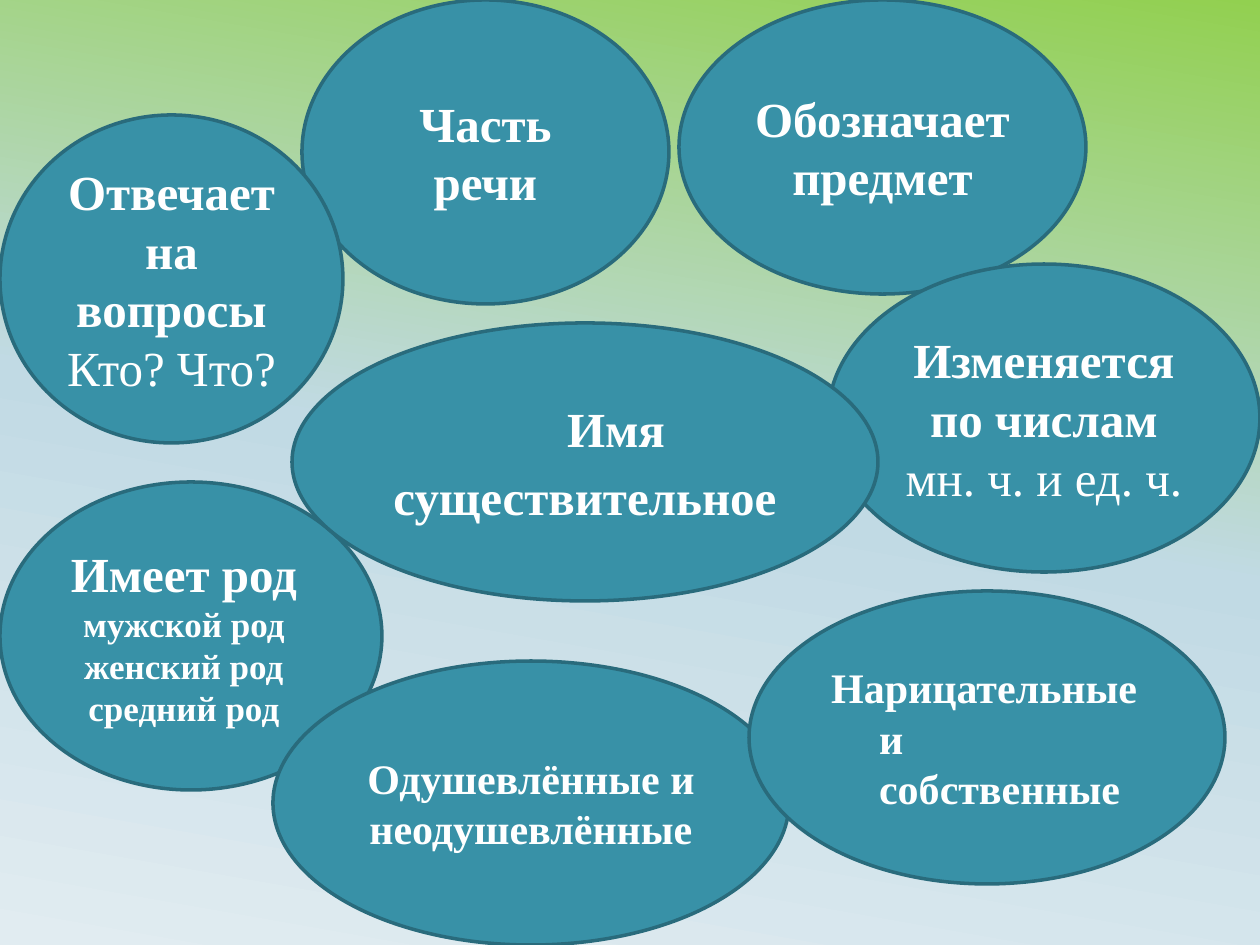
from copy import deepcopy
from pptx import Presentation
from pptx.dml.color import RGBColor as Color
from pptx.enum.shapes import MSO_SHAPE as Kind
from pptx.enum.text import MSO_ANCHOR as Anchor, PP_ALIGN as Align
from pptx.oxml.ns import qn
from pptx.util import Pt

PX = 914400 // 126
TEAL = Color(0x38, 0x91, 0xA7)
EDGE = Color(0x29, 0x6B, 0x7C)
WHITE = Color(0xFF, 0xFF, 0xFF)
GREEN = Color(0x92, 0xD0, 0x50)
SKY = Color(0xC1, 0xDA, 0xE4)
PALE = Color(0xE1, 0xEC, 0xF1)


class Board:
    font = {"name": "Times New Roman", "size": Pt(28), "bold": True}

    def __init__(self, deck):
        self.slide = deck.slides.add_slide(deck.slide_layouts[6])

    def back(self, angle, stops):
        fill = self.slide.background.fill
        fill.gradient()
        fill.gradient_angle = 360 - angle
        row = self.slide.element.find(".//" + qn("a:gsLst"))
        while len(row) < len(stops):
            row.append(deepcopy(row[-1]))
        for stop, (place, color) in zip(fill.gradient_stops, stops):
            stop.position = place
            stop.color.rgb = color

    def oval(self, box, *lines):
        shape = self.slide.shapes.add_shape(Kind.OVAL, *(n * PX for n in box))
        shape.shadow.inherit = False
        shape.fill.solid()
        shape.fill.fore_color.rgb = TEAL
        shape.line.color.rgb = EDGE
        shape.line.width = Pt(2)
        frame = shape.text_frame
        frame.word_wrap = True
        frame.vertical_anchor = Anchor.MIDDLE
        for i, (text, style) in enumerate(lines):
            para = frame.paragraphs[0] if i == 0 else frame.add_paragraph()
            self.label(para, text, **style)

    def label(self, para, text, align=Align.CENTER, before=0, inset=None, **style):
        para.alignment = align
        para.space_before = Pt(before)
        run = para.add_run()
        run.text = text
        run.font.color.rgb = WHITE
        for key, value in {**self.font, **style}.items():
            setattr(run.font, key, value)
        props = para._p.get_or_add_pPr()
        for key, value in (inset or {}).items():
            props.set(key, str(value * PX))


def main():
    deck = Presentation()
    deck.slide_width, deck.slide_height = 1260 * PX, 945 * PX
    board = Board(deck)
    board.back(100, [(0, GREEN), (0.5, SKY), (1, PALE)])

    strong, plain = {}, {"bold": False}
    small, medium = {"size": Pt(20)}, {"size": Pt(24)}
    hang = {"align": Align.LEFT, "before": 4.8, "inset": {"marL": 48, "indent": -48}}
    title = {"before": 5.6}

    board.oval((302, 0, 367, 304), ("Часть речи", strong))
    board.oval((679, 0, 407, 294), ("Обозначает предмет", strong))
    board.oval((0, 115, 343, 328),
               ("Отвечает на вопросы", strong), ("Кто? Что?", plain))
    board.oval((828, 264, 432, 308),
               ("Изменяется по числам", strong), ("мн. ч. и ед. ч.", plain))
    genders = [(f"{name} род", small) for name in ("мужской", "женский", "средний")]
    board.oval((0, 482, 382, 308),
               ("Имеет род", {"inset": {"marR": 14}}), *genders)
    board.oval((273, 661, 516, 284), ("Одушевлённые и неодушевлённые", medium))
    board.oval((749, 591, 476, 293),
               ("Нарицательные и собственные", {**medium, **hang}))
    board.oval((292, 323, 586, 278),
               ("Имя", {**title, "inset": {"marL": 62}}),
               ("существительное", title))
    deck.save("out.pptx")


if __name__ == "__main__":
    main()
